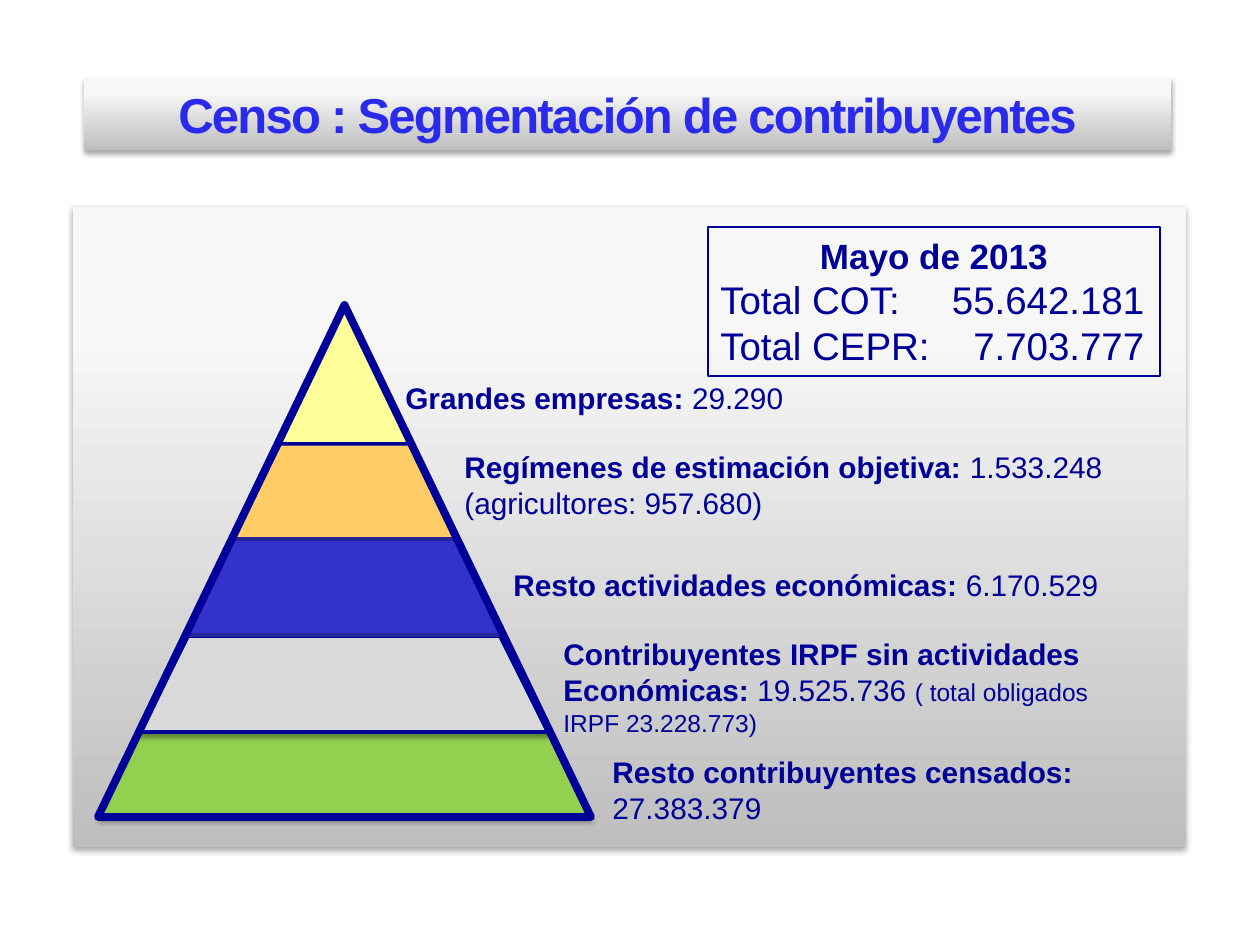
from lxml.etree import SubElement
from pptx import Presentation
from pptx.dml.color import RGBColor
from pptx.enum.shapes import MSO_SHAPE
from pptx.enum.text import MSO_ANCHOR, PP_ALIGN
from pptx.oxml.ns import qn
from pptx.util import Emu, Pt

PX = 914400 / 126
NAVY = "000099"
PANEL = [(0, "BEBEBE"), (0.8, "F7F7F7")]


def px(n):
    return Emu(round(n * PX))


def rgb(code):
    return RGBColor.from_string(code)


def add_shadow(sp, alpha):
    effects = sp._element.spPr.find(qn("a:effectLst"))
    shadow = SubElement(effects, qn("a:outerShdw"), blurRad=str(Pt(3.1)), dist=str(Pt(1.8)),
                        dir="5400000", rotWithShape="0")
    color = SubElement(shadow, qn("a:srgbClr"), val="000000")
    SubElement(color, qn("a:alpha"), val=str(alpha * 1000))


def add_box(slide, kind, box, fill=None, line=None, width=1, shadow=0, adj=None):
    """Add a preset shape; fill is a hex colour, a list of two gradient stops or None."""
    sp = slide.shapes.add_shape(kind, *map(px, box))
    sp.shadow.inherit = False
    if adj is not None:
        sp.adjustments[0] = adj
    if fill is None:
        sp.fill.background()
    elif isinstance(fill, str):
        sp.fill.solid()
        sp.fill.fore_color.rgb = rgb(fill)
    else:
        sp.fill.gradient()
        sp.fill.gradient_angle = 90
        for stop, (position, color) in zip(sp.fill.gradient_stops, fill):
            stop.position = position
            stop.color.rgb = rgb(color)
    if line:
        sp.line.color.rgb = rgb(line)
        sp.line.width = Pt(width)
    else:
        sp.line.fill.background()
    if shadow:
        add_shadow(sp, shadow)
    return sp


def add_run(p, text, size=17, bold=False, color=NAVY, spacing=None):
    r = p.add_run()
    r.text = text
    r.font.name = "Arial"
    r.font.size = Pt(size)
    r.font.bold = bold
    r.font.color.rgb = rgb(color)
    if spacing is not None:
        r._r.get_or_add_rPr().set("spc", str(spacing * 100))


def add_right_tab(p, position):
    tabs = SubElement(p._p.get_or_add_pPr(), qn("a:tabLst"))
    SubElement(tabs, qn("a:tab"), pos=str(px(position)), algn="r")


def add_title(slide, box):
    sp = add_box(slide, MSO_SHAPE.RECTANGLE, box, PANEL, shadow=35)
    tf = sp.text_frame
    tf.word_wrap = True
    tf.vertical_anchor = MSO_ANCHOR.TOP
    p = tf.paragraphs[0]
    p.alignment = PP_ALIGN.CENTER
    add_run(p, "Censo : Segmentación de contribuyentes", size=28, bold=True,
            color="2A2AED", spacing=-1)


def add_totals(slide, box):
    tf = add_box(slide, MSO_SHAPE.RECTANGLE, box, line=NAVY).text_frame
    tf.word_wrap = True
    tf.vertical_anchor = MSO_ANCHOR.MIDDLE
    p = tf.paragraphs[0]
    p.alignment = PP_ALIGN.CENTER
    add_run(p, "Mayo de 2013", size=20, bold=True)
    for name, total in (("Total COT:", "55.642.181"), ("Total CEPR:", "7.703.777")):
        p = tf.add_paragraph()
        p.alignment = PP_ALIGN.LEFT
        add_right_tab(p, 424)
        add_run(p, f"{name}\t{total}", size=22)


def add_pyramid(slide, box):
    left, top, width, height = box
    triangle, trapezoid = MSO_SHAPE.ISOSCELES_TRIANGLE, MSO_SHAPE.TRAPEZOID
    bands = [
        (triangle, (128, 11, 238, 234), dict(fill="FFCC66", line=NAVY, width=2.25)),
        (triangle, (179, 0, 135, 139), dict(fill="FFFF99", line=NAVY, width=2)),
        (trapezoid, (0, 416, width, 96),
         dict(fill="92D050", line=NAVY, width=0.75, shadow=35, adj=0.52)),
        (trapezoid, (42, 331, 408, 96),
         dict(fill="D9D9D9", line=NAVY, width=2.25, shadow=38, adj=0.5)),
        (trapezoid, (86, 234, 320, 96),
         dict(fill="3333CC", line="262697", width=2.25, adj=0.5)),
    ]
    for kind, (x, y, w, h), style in bands:
        add_box(slide, kind, (left + x, top + y, w, h), **style)
    outline = add_box(slide, triangle, box, line=NAVY, width=4.5)
    SubElement(outline.line._get_or_add_ln(), qn("a:round"))


def add_label(slide, box, paragraphs):
    """Add a label whose paragraphs are lists of (text, bold, size) runs."""
    tf = slide.shapes.add_textbox(*map(px, box)).text_frame
    tf.word_wrap = True
    for i, runs in enumerate(paragraphs):
        p = tf.add_paragraph() if i else tf.paragraphs[0]
        for text, bold, size in runs:
            add_run(p, text, size=size, bold=bold)


def add_segments(slide, box):
    left, top = box[:2]
    labels = [
        ((0, 0, 430, 49), [[("Grandes empresas:", True, 17), (" 29.290", False, 17)]]),
        ((59, 69, 689, 84), [[("Regímenes de estimación objetiva: ", True, 17),
                              ("1.533.248 (agricultores: 957.680)", False, 17)]]),
        ((108, 187, 625, 49), [[("Resto actividades económicas:", True, 17),
                                (" 6.170.529", False, 17)]]),
        ((158, 256, 576, 115), [[("Contribuyentes IRPF sin actividades", True, 17)],
                                [("Económicas: ", True, 17), ("19.525.736 ", False, 17),
                                 ("( total obligados IRPF 23.228.773)", False, 14)]]),
        ((207, 374, 576, 84), [[("Resto contribuyentes censados: ", True, 17),
                                ("27.383.379", False, 17)]]),
    ]
    for (x, y, w, h), paragraphs in labels:
        add_label(slide, (left + x, top + y, w, h), paragraphs)


def main():
    prs = Presentation()
    prs.slide_width, prs.slide_height = px(1260), px(945)
    s = prs.slides.add_slide(prs.slide_layouts[6])
    add_box(s, MSO_SHAPE.RECTANGLE, (73, 207, 1113, 640), PANEL, shadow=35)
    add_totals(s, (708, 227, 452, 149))
    add_segments(s, (393, 374, 783, 458))
    add_title(s, (84, 78, 1087, 72))
    add_pyramid(s, (98, 305, 493, 512))
    prs.save("out.pptx")


if __name__ == "__main__":
    main()
